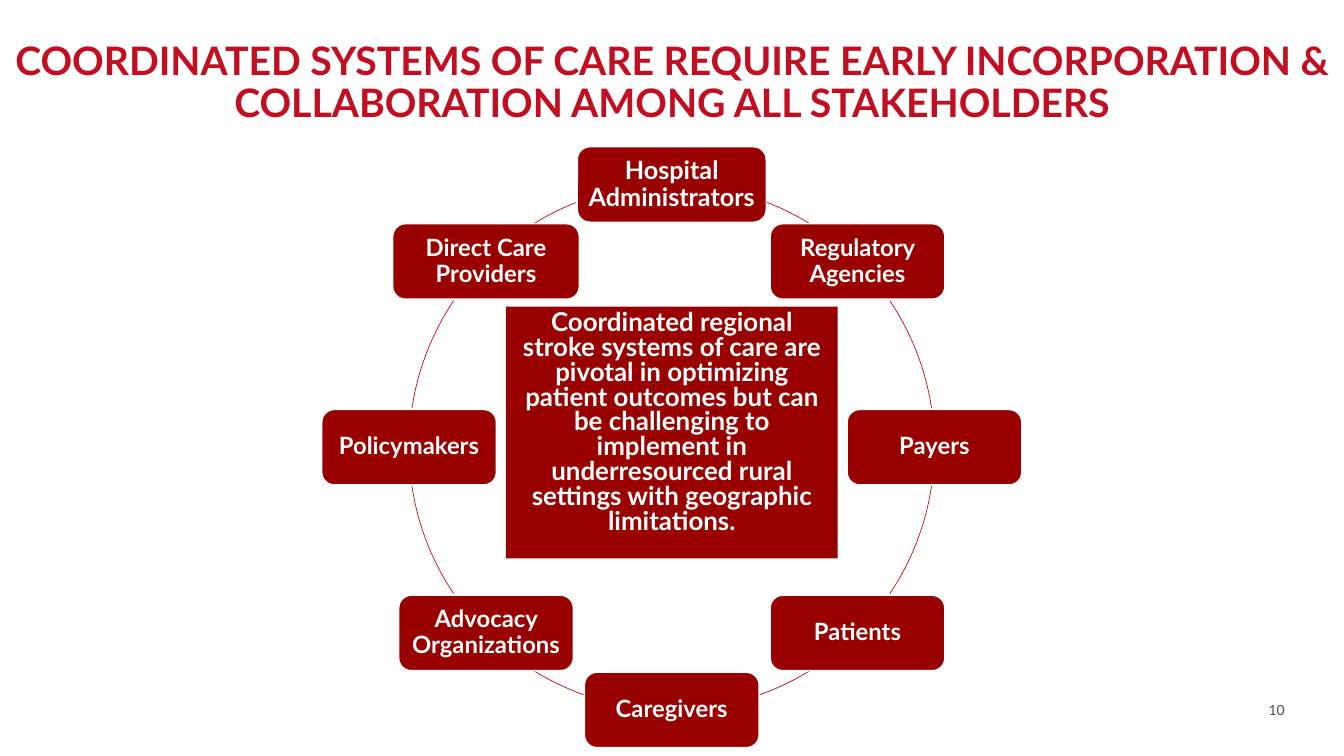
import math
from dataclasses import dataclass

from pptx import Presentation
from pptx.dml.color import RGBColor
from pptx.enum.shapes import MSO_SHAPE
from pptx.enum.text import MSO_ANCHOR, MSO_AUTO_SIZE, PP_ALIGN
from pptx.util import Cm, Pt

CENTER, LEFT = PP_ALIGN.CENTER, PP_ALIGN.LEFT
TOP, MIDDLE = MSO_ANCHOR.TOP, MSO_ANCHOR.MIDDLE
NO_AUTOFIT = MSO_AUTO_SIZE.NONE
RECT, ROUNDED, ARC = MSO_SHAPE.RECTANGLE, MSO_SHAPE.ROUNDED_RECTANGLE, MSO_SHAPE.ARC


@dataclass(frozen=True)
class Theme:
    font: str = "Lato"
    accent: RGBColor = RGBColor(0xC1, 0x0E, 0x20)
    box: RGBColor = RGBColor(0x99, 0x00, 0x00)
    white: RGBColor = RGBColor(0xFF, 0xFF, 0xFF)
    grey: RGBColor = RGBColor(0x4D, 0x4D, 0x4F)
    title_size: float = 28
    message_size: float = 18.5
    lead_size: float = 18
    node_size: float = 17
    number_size: float = 10


class SlideBuilder:
    def __init__(self, slide, theme):
        self.s = slide
        self.theme = theme

    def add_text(self, tf, text, size, color, bold=True, align=CENTER, spacing=0.9, anchor=TOP):
        tf.auto_size = NO_AUTOFIT
        tf.vertical_anchor = anchor
        p = tf.paragraphs[0]
        p.alignment = align
        p.line_spacing = spacing
        r = p.add_run()
        r.text = text
        r.font.name = self.theme.font
        r.font.size = Pt(size)
        r.font.bold = bold
        r.font.color.rgb = color

    def title(self, text, left, top, width, height):
        sp = self.s.shapes.title
        sp.left, sp.top, sp.width, sp.height = Cm(left), Cm(top), Cm(width), Cm(height)
        sp.text_frame.word_wrap = True
        self.add_text(sp.text_frame, text, self.theme.title_size, self.theme.accent)

    def label(self, text, left, top, width, height):
        sp = self.s.shapes.add_textbox(Cm(left), Cm(top), Cm(width), Cm(height))
        sp.text_frame.word_wrap = False
        self.add_text(sp.text_frame, text, self.theme.number_size, self.theme.grey,
                      bold=False, align=LEFT, spacing=1.0)

    def box(self, kind, cx, cy, width, height):
        sp = self.s.shapes.add_shape(kind, Cm(cx - width / 2), Cm(cy - height / 2),
                                     Cm(width), Cm(height))
        sp.shadow.inherit = False
        sp.fill.solid()
        sp.fill.fore_color.rgb = self.theme.box
        sp.text_frame.word_wrap = True
        return sp

    def message(self, text, cx, cy, width, height):
        sp = self.box(RECT, cx, cy, width, height)
        sp.line.fill.background()
        self.add_text(sp.text_frame, text, self.theme.message_size, self.theme.white, spacing=0.8)

    def node(self, text, cx, cy, width, height, size):
        sp = self.box(ROUNDED, cx, cy, width, height)
        sp.line.color.rgb = self.theme.white
        sp.line.width = Pt(1)
        tf = sp.text_frame
        tf.margin_left = tf.margin_right = tf.margin_top = tf.margin_bottom = Cm(0.17)
        self.add_text(tf, text, size, self.theme.white, anchor=MIDDLE)

    def arc(self, cx, cy, radius, start, end):
        sp = self.s.shapes.add_shape(ARC, Cm(cx - radius), Cm(cy - radius),
                                     Cm(2 * radius), Cm(2 * radius))
        sp.shadow.inherit = False
        sp.fill.background()
        sp.line.color.rgb = self.theme.accent
        sp.line.width = Pt(0.5)
        # Adjustments count 100000 units; a degree is 60000
        sp.adjustments[0] = start % 360 * 0.6
        sp.adjustments[1] = end % 360 * 0.6


def main():
    prs = Presentation()
    prs.slide_width, prs.slide_height = Cm(33.87), Cm(19.05)
    theme = Theme()
    s = SlideBuilder(prs.slides.add_slide(prs.slide_layouts[5]), theme)

    # Title and slide number
    s.title("COORDINATED SYSTEMS OF CARE REQUIRE EARLY INCORPORATION & "
            "COLLABORATION AMONG ALL STAKEHOLDERS", 0, 0.91, 33.87, 5.64)
    s.label("10", 31.72, 17.55, 0.99, 0.69)

    # Central message
    cx, cy, radius = 16.93, 11.27, 6.62
    s.message("Coordinated regional stroke systems of care are pivotal in optimizing "
              "patient outcomes but can be challenging to implement in underresourced "
              "rural settings with geographic limitations.", cx, 10.9, 8.36, 6.35)

    # Ring segments on the right, mirrored to the left
    for start, end in [(-68.7, -58.4), (-33.9, -8.5), (8.5, 33.9), (58.4, 70.4)]:
        s.arc(cx, cy, radius, start, end)
        s.arc(cx, cy, radius, 180 - end, 180 - start)

    # Stakeholders, clockwise from the top
    stakeholders = [
        ("Hospital Administrators", 4.76, theme.lead_size),
        ("Regulatory Agencies", 4.4, theme.node_size),
        ("Payers", 4.4, theme.node_size),
        ("Patients", 4.4, theme.node_size),
        ("Caregivers", 4.4, theme.node_size),
        ("Advocacy Organizations", 4.4, theme.node_size),
        ("Policymakers", 4.4, theme.node_size),
        ("Direct Care Providers", 4.7, theme.node_size),
    ]
    for i, (name, width, size) in enumerate(stakeholders):
        angle = math.tau * i / len(stakeholders)
        s.node(name, cx + radius * math.sin(angle), cy - radius * math.cos(angle),
               width, 1.9, size)

    prs.save("out.pptx")


if __name__ == "__main__":
    main()
